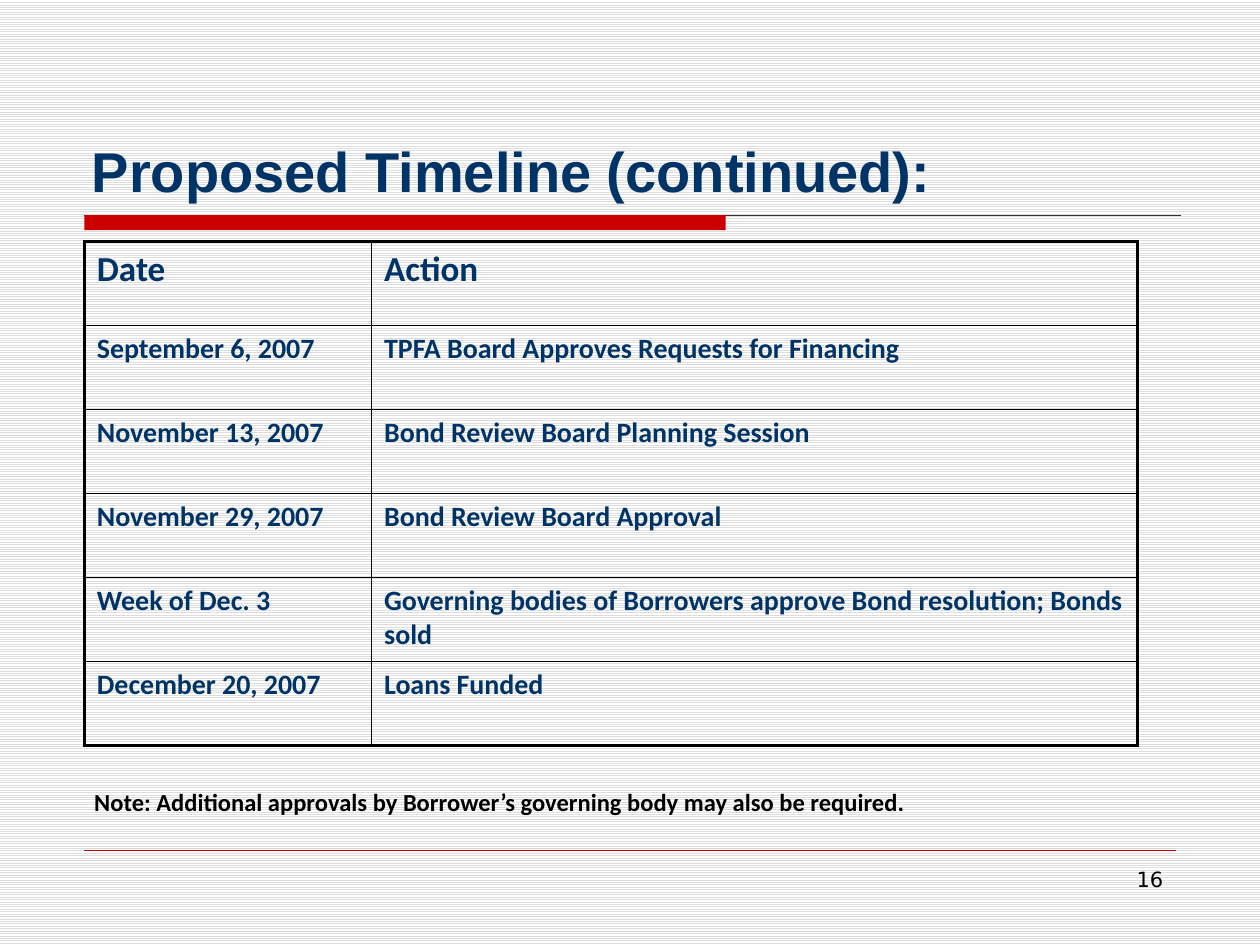
import dataclasses

import lxml.etree
import pptx
import pptx.dml.color
import pptx.enum.dml
import pptx.enum.shapes
import pptx.enum.text
import pptx.oxml.ns
import pptx.util
from pptx.util import Cm, Pt

ALIGN = pptx.enum.text.PP_ALIGN
ANCHOR = pptx.enum.text.MSO_ANCHOR


@dataclasses.dataclass(frozen=True)
class Theme:
    navy: str = "003366"
    red: str = "CC0000"
    black: str = "000000"
    rule: str = "333333"
    stripe: str = "DDDDDD"
    paper: str = "FFFFFF"
    title_size: int = 32
    header_size: int = 20
    body_size: int = 16
    note_size: int = 14
    number_size: int = 12
    outer_border: float = 2.25
    inner_border: float = 1


THEME = Theme()
LEFT = Cm(1.7)
BAR_TOP = Cm(4.34)
ROW_HEIGHT = Cm(1.693)
COLUMN_WIDTHS = (Cm(5.79), Cm(15.44))
TIMELINE = (
    ("Date", "Action"),
    ("September 6, 2007", "TPFA Board Approves Requests for Financing"),
    ("November 13, 2007", "Bond Review Board Planning Session"),
    ("November 29, 2007", "Bond Review Board Approval"),
    ("Week of Dec. 3", "Governing bodies of Borrowers approve Bond resolution; Bonds sold"),
    ("December 20, 2007", "Loans Funded"),
)


def rgb(value):
    return pptx.dml.color.RGBColor.from_string(value)


def write_text(text_frame, text, size, color, font="Calibri", bold=True, align=ALIGN.LEFT):
    paragraph = text_frame.paragraphs[0]
    paragraph.alignment = align
    run = paragraph.add_run()
    run.text = text
    for name, value in {"name": font, "size": Pt(size), "bold": bold}.items():
        setattr(run.font, name, value)
    run.font.color.rgb = rgb(color)


def add_text(slide, box, text, size, color, anchor=ANCHOR.TOP, wrap=True, **text_format):
    text_frame = slide.shapes.add_textbox(*box).text_frame
    frame_format = {"word_wrap": wrap, "vertical_anchor": anchor}
    for name, value in frame_format.items():
        setattr(text_frame, name, value)
    write_text(text_frame, text, size, color, **text_format)


def add_rule(slide, left, right, top, color, width):
    line = slide.shapes.add_connector(
        pptx.enum.shapes.MSO_CONNECTOR.STRAIGHT, left, top, right, top
    )
    line.line.color.rgb = rgb(color)
    line.line.width = Pt(width)
    lxml.etree.SubElement(line.element.spPr, pptx.oxml.ns.qn("a:effectLst"))


def add_bar(slide, left, top, width, height, color):
    bar = slide.shapes.add_shape(
        pptx.enum.shapes.MSO_SHAPE.RECTANGLE, left, top, width, height
    )
    bar.shadow.inherit = False
    bar.fill.solid()
    bar.fill.fore_color.rgb = rgb(color)
    bar.line.fill.background()


def set_borders(cell, outer_sides):
    """Draw all four borders, heavier on the sides that face out of the table."""
    qn = pptx.oxml.ns.qn
    properties = cell._tc.get_or_add_tcPr()
    for index, side in enumerate("LRTB"):
        width = THEME.outer_border if side in outer_sides else THEME.inner_border
        border = lxml.etree.Element(qn(f"a:ln{side}"), w=str(Pt(width)))
        fill = lxml.etree.SubElement(border, qn("a:solidFill"))
        lxml.etree.SubElement(fill, qn("a:srgbClr"), val=THEME.black)
        properties.insert(index, border)


def add_timeline(slide, left, top):
    last_row, last_column = len(TIMELINE) - 1, len(COLUMN_WIDTHS) - 1
    table = slide.shapes.add_table(
        len(TIMELINE), len(COLUMN_WIDTHS), left, top,
        sum(COLUMN_WIDTHS), ROW_HEIGHT * len(TIMELINE),
    ).table
    table.first_row = table.horz_banding = False
    for column, width in zip(table.columns, COLUMN_WIDTHS):
        column.width = width
    for row, texts in enumerate(TIMELINE):
        table.rows[row].height = ROW_HEIGHT
        size = THEME.header_size if row == 0 else THEME.body_size
        for column, text in enumerate(texts):
            cell = table.cell(row, column)
            cell.fill.background()
            write_text(cell.text_frame, text, size, THEME.navy)
            edges = {"L": column == 0, "R": column == last_column,
                     "T": row == 0, "B": row == last_row}
            set_borders(cell, [side for side, outer in edges.items() if outer])


def set_striped_background(slide):
    fill = slide.background.fill
    fill.patterned()
    fill.pattern = pptx.enum.dml.MSO_PATTERN.LIGHT_HORIZONTAL
    fill.fore_color.rgb = rgb(THEME.stripe)
    fill.back_color.rgb = rgb(THEME.paper)


def main():
    presentation = pptx.Presentation()
    presentation.slide_width, presentation.slide_height = Cm(25.4), Cm(19.05)
    slide = presentation.slides.add_slide(presentation.slide_layouts[6])
    set_striped_background(slide)

    add_rule(slide, LEFT, Cm(23.8), BAR_TOP, THEME.rule, 0.75)
    add_bar(slide, LEFT, BAR_TOP, Cm(12.93), Cm(0.3), THEME.red)
    add_rule(slide, LEFT, Cm(23.7), Cm(17.15), THEME.red, 0.25)
    add_text(slide, (Cm(18.2), Cm(17.35), Cm(5.5), Cm(1.32)), "16",
             THEME.number_size, THEME.black,
             font="DejaVu Sans", bold=False, align=ALIGN.RIGHT)
    add_text(slide, (Cm(1.6), Cm(0.84), Cm(22.23), Cm(3.39)),
             "Proposed Timeline (continued):", THEME.title_size, THEME.navy,
             anchor=ANCHOR.BOTTOM, font="Arial")
    add_timeline(slide, LEFT, Cm(4.87))
    add_text(slide, (Cm(1.65), Cm(15.75), Cm(19.25), Cm(0.84)),
             "Note: Additional approvals by Borrower’s governing body may also be required.",
             THEME.note_size, THEME.black, wrap=False)
    presentation.save("out.pptx")


if __name__ == "__main__":
    main()
